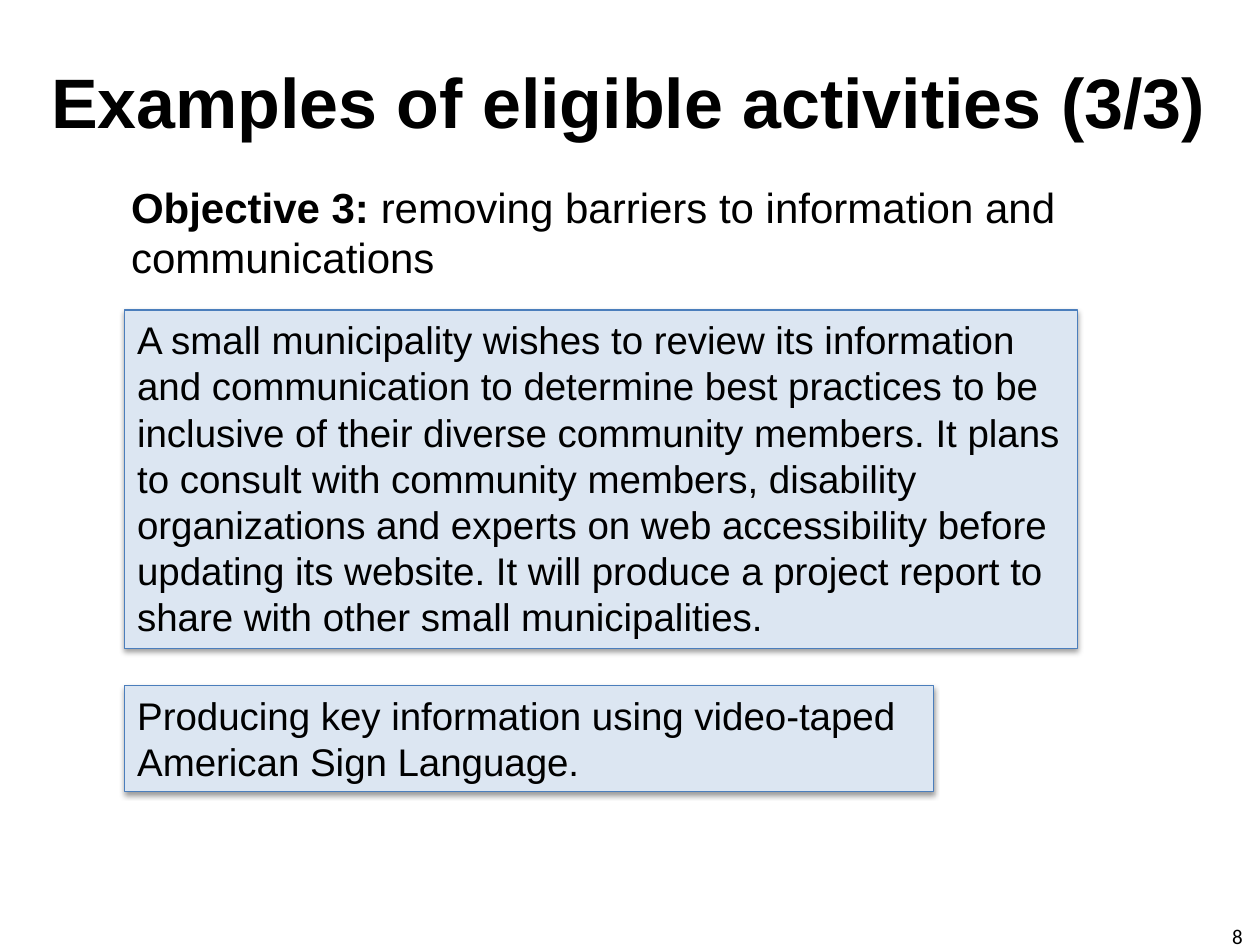
"""Build the slide on eligible activities for removing communication barriers."""
from lxml import etree
from pptx import Presentation
from pptx import util as u
from pptx.dml.color import RGBColor
from pptx.enum import shapes, text
from pptx.oxml import ns

COLOURS = {"ink": "000000", "panel": "DCE6F2", "edge": "4B7EBC"}
TITLE = {"name": "Arial", "size": u.Pt(40), "bold": True}
OBJECTIVE = {"name": "Arial", "size": u.Pt(24), "bold": False}
EXAMPLE = {"name": "Arial", "size": u.Pt(22)}
PAGE_NUMBER = {"name": "Calibri", "size": u.Pt(12)}
PANEL_LEFT = 71.3
EXAMPLES = [
    (177.1, 544.3, 193.7,
     "A small municipality wishes to review its information and communication "
     "to determine best practices to be inclusive of their diverse community "
     "members. It plans to consult with community members, disability "
     "organizations and experts on web accessibility before updating its "
     "website. It will produce a project report to share with other small "
     "municipalities."),
    (391.7, 462.2, 60.5,
     "Producing key information using video-taped American Sign Language."),
]


def colour(key):
    """Return the named colour."""
    return RGBColor.from_string(COLOURS[key])


def points(*lengths):
    """Convert lengths in points."""
    return [u.Pt(length) for length in lengths]


def write(frame, parts, align=text.PP_ALIGN.LEFT):
    """Fill a frame with one paragraph of (wording, format) parts."""
    frame.word_wrap = True
    frame.vertical_anchor = text.MSO_ANCHOR.TOP
    paragraph = frame.paragraphs[0]
    paragraph.alignment = align
    for wording, style in parts:
        run = paragraph.add_run()
        run.text = wording
        run.font.color.rgb = colour("ink")
        for attribute, value in style.items():
            setattr(run.font, attribute, value)


def add_text(slide, box, parts, inset=None, **layout):
    """Add a text box, with an even inset if one is given."""
    frame = slide.shapes.add_textbox(*points(*box)).text_frame
    if inset is not None:
        for side in ("left", "top", "right", "bottom"):
            setattr(frame, f"margin_{side}", u.Pt(inset))
    write(frame, parts, **layout)


def cast_shadow(panel):
    """Give a panel a soft shadow straight below it."""
    panel.shadow.inherit = False
    effects = panel._element.spPr.find(ns.qn("a:effectLst"))
    shadow = etree.SubElement(
        effects, ns.qn("a:outerShdw"), blurRad=str(u.Pt(3.1)),
        dist=str(u.Pt(1.6)), dir="5400000", rotWithShape="0")
    ink = etree.SubElement(shadow, ns.qn("a:srgbClr"), val=COLOURS["ink"])
    etree.SubElement(ink, ns.qn("a:alpha"), val="38000")


def add_example(slide, top, width, height, wording):
    """Add a shaded panel that holds one example."""
    panel = slide.shapes.add_shape(
        shapes.MSO_SHAPE.RECTANGLE, *points(PANEL_LEFT, top, width, height))
    panel.fill.solid()
    panel.fill.fore_color.rgb = colour("panel")
    panel.line.color.rgb = colour("edge")
    panel.line.width = u.Pt(0.75)
    cast_shadow(panel)
    write(panel.text_frame, [(wording, EXAMPLE)])
    panel.text_frame.auto_size = text.MSO_AUTO_SIZE.SHAPE_TO_FIT_TEXT


def main():
    """Build and save the slide."""
    deck = Presentation()
    deck.slide_width, deck.slide_height = points(720, 540)
    slide = deck.slides.add_slide(deck.slide_layouts[6])
    add_text(slide, (9.4, 30.2, 699.1, 69.1),
             [("Examples of eligible activities (3/3)", TITLE)],
             align=text.PP_ALIGN.CENTER)
    add_text(slide, (PANEL_LEFT, 100.1, 568.8, 77.8),
             [("Objective 3: ", {**OBJECTIVE, "bold": True}),
              ("removing barriers to information and communications", OBJECTIVE)],
             inset=3.6)
    for example in EXAMPLES:
        add_example(slide, *example)
    add_text(slide, (697, 524.2, 28.8, 28.8), [("8", PAGE_NUMBER)])
    deck.save("out.pptx")


if __name__ == "__main__":
    main()
